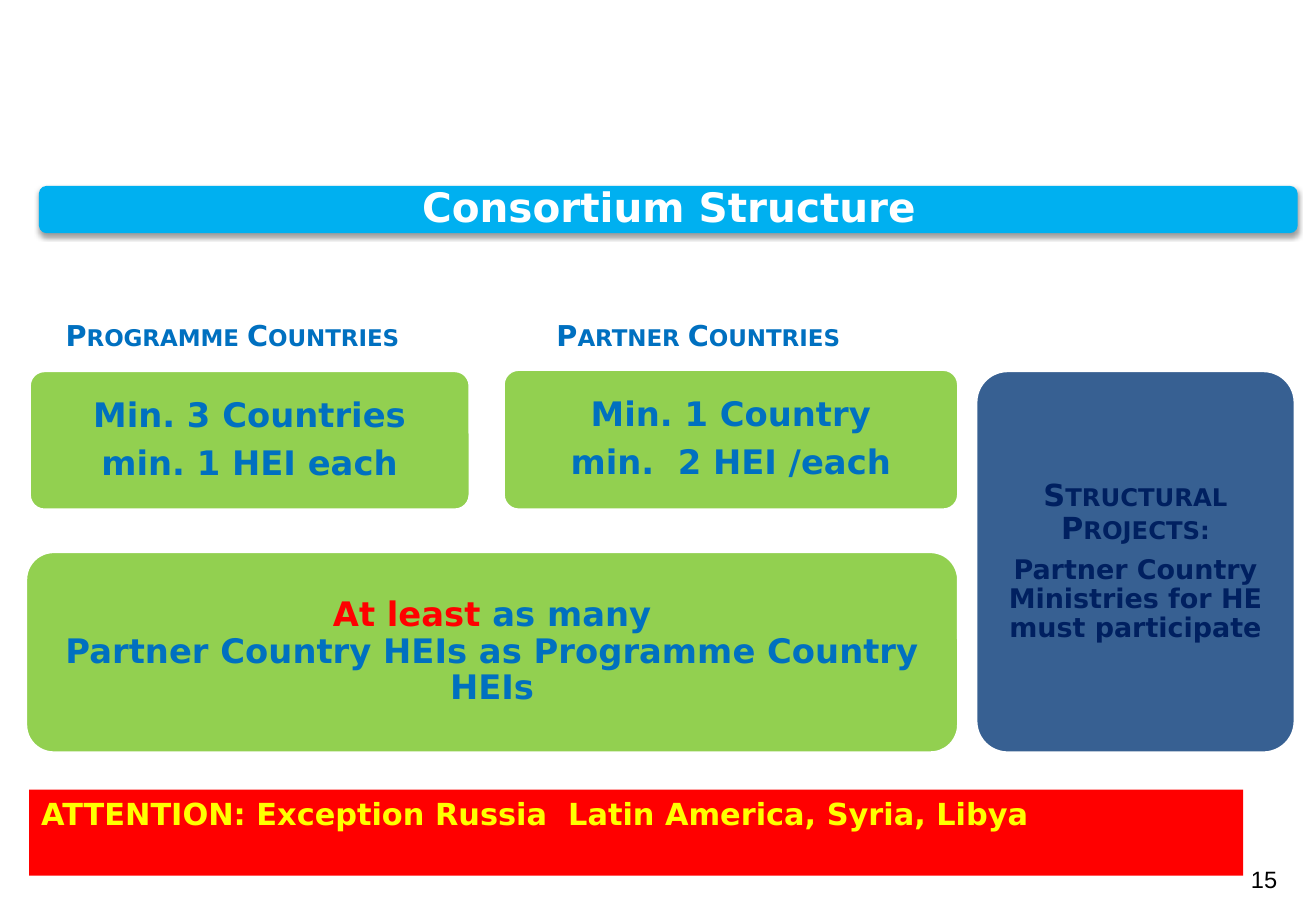
"""Build the Consortium Structure slide."""
from dataclasses import dataclass

from lxml.etree import SubElement
from pptx import Presentation
from pptx.dml.color import RGBColor
from pptx.enum.shapes import MSO_SHAPE
from pptx.enum.text import MSO_ANCHOR, MSO_AUTO_SIZE, PP_ALIGN
from pptx.oxml.ns import qn
from pptx.util import Inches, Pt


@dataclass(frozen=True)
class Theme:
    """Colours, fonts and type sizes."""
    font: str = "DejaVu Sans"
    number_font: str = "Arial"
    white: str = "FFFFFF"
    black: str = "000000"
    banner: str = "00B0F0"
    green: str = "92D050"
    navy: str = "376092"
    blue: str = "0070C0"
    dark_blue: str = "002060"
    red: str = "FF0000"
    yellow: str = "FFFF00"
    title_size: int = 24
    card_size: int = 20
    heading_size: int = 18
    label_size: int = 17
    detail_size: int = 16
    number_size: int = 14


@dataclass(frozen=True)
class Style:
    """Look of one run of text."""
    color: str
    size: int
    small_caps: bool = False
    bold: bool = True
    font: str = Theme.font


THEME = Theme()
CARD = Style(THEME.blue, THEME.card_size)
EMPHASIS = Style(THEME.red, THEME.card_size)
LABEL = Style(THEME.blue, THEME.label_size, small_caps=True)
HEADING = Style(THEME.dark_blue, THEME.heading_size, small_caps=True)
DETAIL = Style(THEME.dark_blue, THEME.detail_size)
ATTENTION = Style(THEME.yellow, THEME.heading_size)
TITLE = Style(THEME.white, THEME.title_size)
NUMBER = Style(THEME.black, THEME.number_size, bold=False, font=THEME.number_font)

SLIDE_SIZE = (10.83, 7.5)
BANNER_BOX = (0.32, 1.53, 10.36, 0.39)
TITLE_BOX = (0.34, 1.54, 10.33, 0.36)
TITLE_TEXT = [[("Consortium Structure", TITLE)]]

CARDS = [
    ((0.24, 3.05, 3.63, 1.15), THEME.green, 0.11, 0.35, [
        [("Min. 3 Countries", CARD)],
        [("min. 1 HEI each", CARD)]]),
    ((4.14, 3.04, 3.75, 1.16), THEME.green, 0.11, 0.35, [
        [("Min. 1 Country", CARD)],
        [("min.  2 HEI /each", CARD)]]),
    ((0.21, 4.54, 7.68, 1.66), THEME.green, 0.14, 0, [
        [("At least ", EMPHASIS), ("as many", CARD)],
        [("Partner Country HEIs as Programme Country HEIs", CARD)]]),
    ((8.03, 3.05, 2.63, 3.15), THEME.navy, 0.1, 0.35, [
        [("Structural Projects:", HEADING)],
        [("Partner Country Ministries for HE must participate", DETAIL)]]),
]
LABELS = [
    ((0.24, 2.57, 3.63, 0.39), 0.3, "Programme Countries"),
    ((4.22, 2.57, 3.74, 0.39), 0.36, "Partner Countries"),
]
ATTENTION_BOX = (0.24, 6.5, 9.99, 0.71)
ATTENTION_TEXT = [[("ATTENTION: Exception Russia  Latin America, Syria, Libya", ATTENTION)]]
NUMBER_BOX = (8.08, 7.07, 2.53, 0.43)
NUMBER_TEXT = [[("15", NUMBER)]]


def write(shape, paragraphs, align=PP_ALIGN.LEFT, anchor=MSO_ANCHOR.TOP,
          margins=(0.1, 0.05), spacing=1.0, after=0):
    """Fill a shape with formatted paragraphs."""
    frame = shape.text_frame
    frame.word_wrap = True
    frame.auto_size = MSO_AUTO_SIZE.NONE
    frame.vertical_anchor = anchor
    frame.margin_left = frame.margin_right = Inches(margins[0])
    frame.margin_top = frame.margin_bottom = Inches(margins[1])
    for index, runs in enumerate(paragraphs):
        paragraph = frame.add_paragraph() if index else frame.paragraphs[0]
        paragraph.alignment = align
        paragraph.line_spacing = spacing
        paragraph.space_before = Pt(0)
        paragraph.space_after = Pt(after * runs[0][1].size)
        for text, style in runs:
            run = paragraph.add_run()
            run.text = text
            run.font.name = style.font
            run.font.size = Pt(style.size)
            run.font.bold = style.bold
            run.font.color.rgb = RGBColor.from_string(style.color)
            if style.small_caps:
                run._r.get_or_add_rPr().set("cap", "small")


def add_panel(slide, kind, box, color):
    """Add a filled shape without line or shadow."""
    shape = slide.shapes.add_shape(kind, *map(Inches, box))
    shape.shadow.inherit = False
    shape.fill.solid()
    shape.fill.fore_color.rgb = RGBColor.from_string(color)
    shape.line.fill.background()
    return shape


def add_drop_shadow(shape):
    """Give a shape a soft shadow below it."""
    effects = shape._element.spPr.find(qn("a:effectLst"))
    shadow = SubElement(effects, qn("a:outerShdw"), blurRad=str(Pt(3.1)),
                        dist=str(Pt(1.6)), dir="5400000", rotWithShape="0")
    color = SubElement(shadow, qn("a:srgbClr"), val=THEME.black)
    SubElement(color, qn("a:alpha"), val="38000")


def add_title(slide):
    """Place the title over its banner."""
    banner = add_panel(slide, MSO_SHAPE.ROUNDED_RECTANGLE, BANNER_BOX, THEME.banner)
    add_drop_shadow(banner)
    title = slide.shapes.title
    title.left, title.top, title.width, title.height = map(Inches, TITLE_BOX)
    write(title, TITLE_TEXT, PP_ALIGN.CENTER, MSO_ANCHOR.MIDDLE, (0.1, 0.1), 0.9)
    banner._element.addnext(title._element)


def add_card(slide, box, color, rounding, after, paragraphs):
    """Add a rounded card with centred text."""
    card = add_panel(slide, MSO_SHAPE.ROUNDED_RECTANGLE, box, color)
    card.adjustments[0] = rounding
    card.line.color.rgb = RGBColor.from_string(THEME.white)
    card.line.width = Pt(2)
    write(card, paragraphs, PP_ALIGN.CENTER, MSO_ANCHOR.MIDDLE, (0.07, 0.07), 0.9, after)


def main():
    """Build and save the presentation."""
    presentation = Presentation()
    presentation.slide_width, presentation.slide_height = map(Inches, SLIDE_SIZE)
    slide = presentation.slides.add_slide(presentation.slide_layouts[5])
    for card in CARDS:
        add_card(slide, *card)
    for box, indent, text in LABELS:
        label = slide.shapes.add_textbox(*map(Inches, box))
        write(label, [[(text, LABEL)]], margins=(indent, 0.05))
    number = slide.shapes.add_textbox(*map(Inches, NUMBER_BOX))
    write(number, NUMBER_TEXT, PP_ALIGN.RIGHT)
    attention = add_panel(slide, MSO_SHAPE.RECTANGLE, ATTENTION_BOX, THEME.red)
    write(attention, ATTENTION_TEXT)
    add_title(slide)
    presentation.save("out.pptx")


if __name__ == "__main__":
    main()
